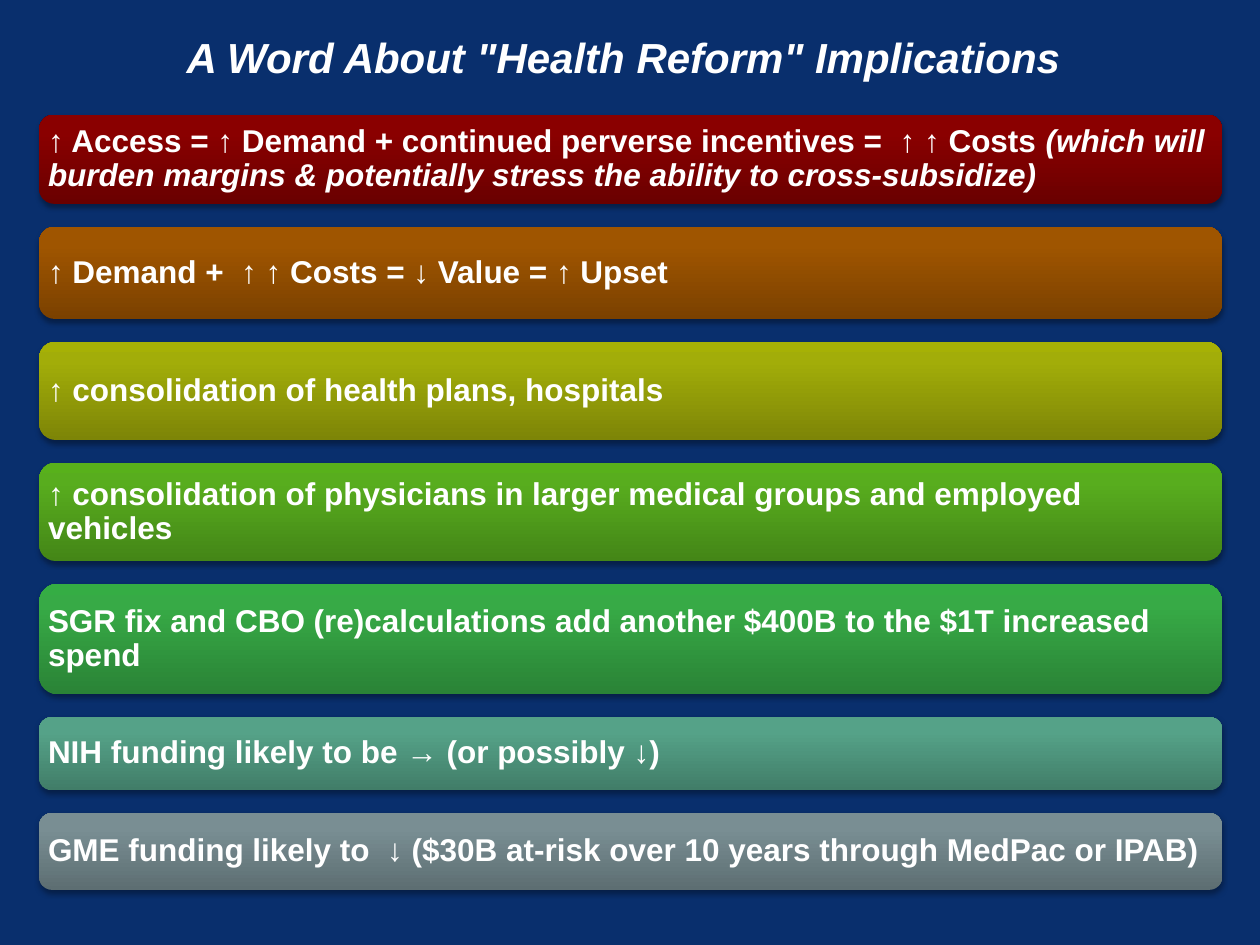
"""Build the slide on the implications of health reform as a stack of coloured bars."""
import copy

import lxml.etree
import pptx
import pptx.dml.color
import pptx.enum.shapes
import pptx.enum.text
import pptx.oxml
import pptx.oxml.ns
import pptx.util

Cm = pptx.util.Cm
Pt = pptx.util.Pt
qn = pptx.oxml.ns.qn

COLORS = {
    "background": "092F6D",
    "text": "FFFFFF",
    "red": ("6A0000", "8A0000", "8A0000"),
    "orange": ("7B4100", "9F5500", "A05500"),
    "olive": ("7D8507", "A2AD09", "A6B105"),
    "lime": ("448617", "58AD1E", "58B11B"),
    "green": ("2A8336", "37AA46", "35AD44"),
    "teal": ("417D68", "55A288", "53A489"),
    "slate": ("5D6E72", "798E93", "798F95"),
}
STOPS = (0, 0.8, 1)
BAR_LEFT, BAR_TOP, BAR_WIDTH, BAR_GAP = 0.79, 2.31, 23.85, 0.46
BAR_INSET = 0.18
CORNER_INSET = 0.1667 * 0.293
BARS = [
    ("red", 1.8, "↑ Access = ↑ Demand + continued perverse incentives =  ↑ ↑ Costs ",
     "(which will burden margins & potentially stress the ability to cross-subsidize)"),
    ("orange", 1.86, "↑ Demand +  ↑ ↑ Costs = ↓ Value = ↑ Upset", ""),
    ("olive", 1.98, "↑ consolidation of health plans, hospitals", ""),
    ("lime", 1.98, "↑ consolidation of physicians in larger medical groups and employed vehicles", ""),
    ("green", 2.23, "SGR fix and CBO (re)calculations add another $400B to the $1T increased spend", ""),
    ("teal", 1.47, "NIH funding likely to be → (or possibly ↓)", ""),
    ("slate", 1.55, "GME funding likely to  ↓ ($30B at-risk over 10 years through MedPac or IPAB)", ""),
]


def rgb(value):
    """Turn a hex string into a colour."""
    return pptx.dml.color.RGBColor.from_string(value)


def format_run(r, size, italic):
    """Give a run the slide's bold white lettering."""
    r.font.name = "Arial"
    r.font.size = Pt(size)
    r.font.bold = True
    r.font.italic = italic
    r.font.color.rgb = rgb(COLORS["text"])


def set_frame(tf, margin_x, margin_y):
    """Wrap and centre a text frame vertically within its margins."""
    tf.word_wrap = True
    tf.vertical_anchor = pptx.enum.text.MSO_ANCHOR.MIDDLE
    tf.margin_left = tf.margin_right = Cm(margin_x)
    tf.margin_top = tf.margin_bottom = Cm(margin_y)


def fill_gradient(sp, colors):
    """Fill a shape with a three-stop gradient rising from its dark lower edge."""
    sp.fill.gradient()
    sp.fill.gradient_angle = 90
    stop_list = sp._element.spPr.find(".//" + qn("a:gsLst"))
    stop_list.append(copy.deepcopy(stop_list[-1]))
    for stop, position, color in zip(sp.fill.gradient_stops, STOPS, colors):
        stop.position = position
        stop.color.rgb = rgb(color)


def add_shadow(sp):
    """Put a soft black shadow below a shape."""
    sp.shadow.inherit = False
    effects = sp._element.spPr.find(qn("a:effectLst"))
    shadow = lxml.etree.SubElement(effects, qn("a:outerShdw"), blurRad=str(Pt(3.1)),
                                   dist=str(Pt(1.8)), dir="5400000", rotWithShape="0")
    color = lxml.etree.SubElement(shadow, qn("a:srgbClr"), val="000000")
    lxml.etree.SubElement(color, qn("a:alpha"), val="35000")


def add_title(s, text):
    """Place the slide title."""
    sp = s.shapes.title
    sp.left, sp.top, sp.width, sp.height = Cm(0.38), Cm(0.79), Cm(24.38), Cm(0.86)
    tf = sp.text_frame
    tf.text = text
    set_frame(tf, 0, 0)
    tf.auto_size = pptx.enum.text.MSO_AUTO_SIZE.SHAPE_TO_FIT_TEXT
    p = tf.paragraphs[0]
    p.alignment = pptx.enum.text.PP_ALIGN.CENTER
    p.line_spacing = 0.85
    format_run(p.runs[0], 24, True)


def add_bar(s, top, height, colors, text, aside):
    """Add a rounded bar with a statement and an optional italic aside."""
    sp = s.shapes.add_shape(pptx.enum.shapes.MSO_SHAPE.ROUNDED_RECTANGLE,
                            Cm(BAR_LEFT), Cm(top), Cm(BAR_WIDTH), Cm(height))
    fill_gradient(sp, colors)
    sp.line.fill.background()
    add_shadow(sp)
    tf = sp.text_frame
    margin = BAR_INSET - CORNER_INSET * height
    set_frame(tf, margin, margin)
    p = tf.paragraphs[0]
    p.text = text
    p.alignment = pptx.enum.text.PP_ALIGN.LEFT
    p.line_spacing = 0.9
    format_run(p.runs[0], 18, False)
    if aside:
        r = p.add_run()
        r.text = aside
        format_run(r, 18, True)


def main():
    """Build and save the slide."""
    prs = pptx.Presentation()
    prs.slide_width, prs.slide_height = Cm(25.4), Cm(19.05)
    s = prs.slides.add_slide(prs.slide_layouts[5])
    s.background.fill.solid()
    s.background.fill.fore_color.rgb = rgb(COLORS["background"])
    top = BAR_TOP
    for color, height, text, aside in BARS:
        add_bar(s, top, height, COLORS[color], text, aside)
        top += height + BAR_GAP
    add_title(s, 'A Word About "Health Reform" Implications')
    prs.save("out.pptx")


if __name__ == "__main__":
    main()
